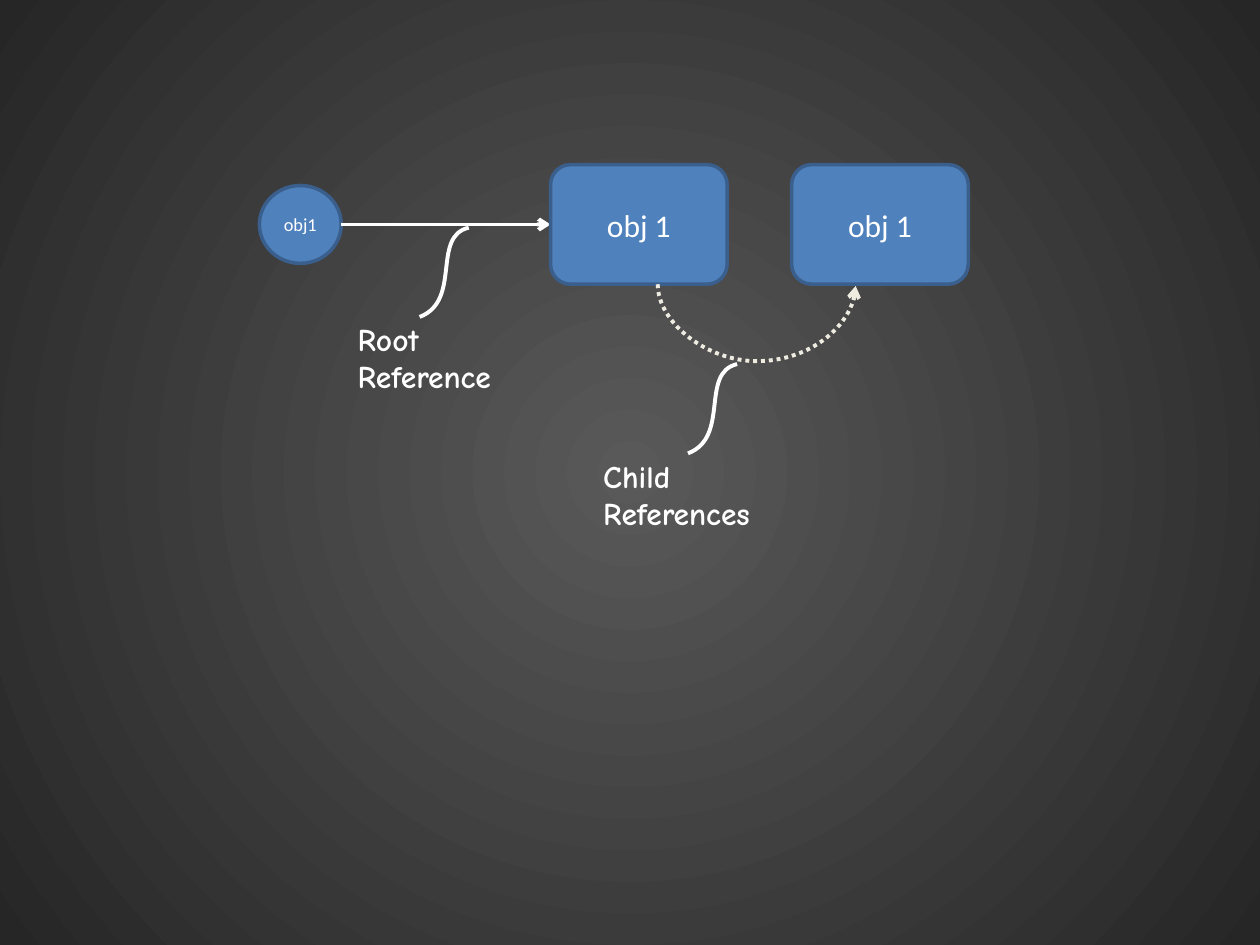
from dataclasses import dataclass

from lxml.etree import SubElement
from pptx import Presentation
from pptx.dml.color import RGBColor
from pptx.enum.dml import MSO_LINE
from pptx.enum.shapes import MSO_CONNECTOR, MSO_SHAPE
from pptx.enum.text import MSO_ANCHOR, MSO_AUTO_SIZE, PP_ALIGN
from pptx.oxml.ns import qn
from pptx.util import Cm, Pt


@dataclass(frozen=True)
class Theme:
    center: RGBColor = RGBColor(0x59, 0x59, 0x59)
    edge: RGBColor = RGBColor(0x26, 0x26, 0x26)
    node: RGBColor = RGBColor(0x4F, 0x81, 0xBD)
    outline: RGBColor = RGBColor(0x3A, 0x5F, 0x8C)
    white: RGBColor = RGBColor(0xFF, 0xFF, 0xFF)
    cream: RGBColor = RGBColor(0xEE, 0xEC, 0xE1)
    node_font: str = "Calibri"
    label_font: str = "Comic Neue"
    text_size: float = 18
    small_size: float = 10.5
    outline_width: float = 2
    line_width: float = 2.25


THEME = Theme()
BOX_WIDTH, BOX_HEIGHT = 3.56, 2.41


def paint_background(slide):
    """Radial gradient, light in the middle."""
    fill = slide.background.fill
    fill.gradient()
    for stop, color in zip(fill.gradient_stops, (THEME.center, THEME.edge)):
        stop.color.rgb = color
    gradient = slide.background._cSld.find(".//" + qn("a:gradFill"))
    gradient.remove(gradient.find(qn("a:lin")))
    radial = SubElement(gradient, qn("a:path"), path="circle")
    SubElement(radial, qn("a:fillToRect"), l="50000", t="50000", r="50000", b="50000")


def add_run(paragraph, text, font_name, size, bold=None):
    run = paragraph.add_run()
    run.text = text
    run.font.name = font_name
    run.font.size = Pt(size)
    run.font.bold = bold
    run.font.color.rgb = THEME.white


def add_node(slide, kind, left, top, width, height, text, size):
    shape = slide.shapes.add_shape(kind, Cm(left), Cm(top), Cm(width), Cm(height))
    shape.shadow.inherit = False
    shape.fill.solid()
    shape.fill.fore_color.rgb = THEME.node
    shape.line.color.rgb = THEME.outline
    shape.line.width = Pt(THEME.outline_width)
    frame = shape.text_frame
    frame.word_wrap = False
    frame.vertical_anchor = MSO_ANCHOR.MIDDLE
    paragraph = frame.paragraphs[0]
    paragraph.alignment = PP_ALIGN.CENTER
    add_run(paragraph, text, THEME.node_font, size)


def add_object_box(slide, left, top):
    add_node(slide, MSO_SHAPE.ROUNDED_RECTANGLE, left, top,
             BOX_WIDTH, BOX_HEIGHT, "obj 1", THEME.text_size)


def add_arrow(slide, kind, start, end, color, dash=None):
    arrow = slide.shapes.add_connector(kind, *map(Cm, start + end))
    arrow.line.color.rgb = color
    arrow.line.width = Pt(THEME.line_width)
    if dash:
        arrow.line.dash_style = dash
    properties = arrow._element.spPr
    SubElement(properties.find(qn("a:ln")), qn("a:tailEnd"), type="arrow")
    SubElement(properties, qn("a:effectLst"))
    return arrow


def add_callout(slide, left, top, text, text_left, text_top, text_width):
    """S-shaped leader, with its top left corner at left, top, and a label."""
    curve = [(0, 1.8), (0.86, 1.47), (0.23, 0.18), (0.99, 0)]
    points = [(Cm(left + x), Cm(top + y)) for x, y in curve]
    builder = slide.shapes.build_freeform(*points[0])
    builder.add_line_segments(points[1:], close=False)
    leader = builder.convert_to_shape()
    leader.shadow.inherit = False
    leader.fill.background()
    leader.line.color.rgb = THEME.white
    leader.line.width = Pt(THEME.line_width)

    # The three segment points become the handles and end of one Bezier curve
    outline = leader._element.spPr.find(".//" + qn("a:path"))
    segments = outline.findall(qn("a:lnTo"))
    bezier = SubElement(outline, qn("a:cubicBezTo"))
    for segment in segments:
        bezier.append(segment[0])
        outline.remove(segment)

    label = slide.shapes.add_textbox(Cm(text_left), Cm(text_top), Cm(text_width), Cm(1.02))
    frame = label.text_frame
    frame.word_wrap = True
    frame.auto_size = MSO_AUTO_SIZE.SHAPE_TO_FIT_TEXT
    add_run(frame.paragraphs[0], text, THEME.label_font, THEME.text_size, bold=True)


def add_root_reference(slide, left, top, width):
    """Root circle, with an arrow to the right edge of the region."""
    diameter, height = 1.65, 1.57
    middle = top + BOX_HEIGHT / 2
    add_node(slide, MSO_SHAPE.OVAL, left, middle - height / 2,
             diameter, height, "obj1", THEME.small_size)
    add_arrow(slide, MSO_CONNECTOR.STRAIGHT, (left + diameter, middle),
              (left + width, middle), THEME.white)
    add_callout(slide, left + 3.23, top + 1.27, "Root Reference",
                left + 1.73, top + 3, 4.45)


def add_child_reference(slide, left, top, width):
    """Two object boxes, joined by a dotted curve below them."""
    add_object_box(slide, left, top)
    add_object_box(slide, left + width - BOX_WIDTH, top)

    # The curve is a thin connector on its side, bulging far out of its frame
    start_x, end_x, bottom = left + 2.16, left + 6.15, top + BOX_HEIGHT
    span, depth, thickness = end_x - start_x, 1.55, 0.035
    center = (start_x + end_x) / 2
    middle = bottom + thickness / 2
    arrow = add_arrow(slide, MSO_CONNECTOR.CURVE,
                      (center - thickness / 2, middle - span / 2),
                      (center + thickness / 2, middle + span / 2),
                      THEME.cream, MSO_LINE.ROUND_DOT)
    properties = arrow._element.spPr
    frame = properties.find(qn("a:xfrm"))
    frame.set("rot", str(270 * 60000))
    frame.set("flipH", "1")
    bulge = round(depth / thickness * 100000)
    SubElement(properties.find(".//" + qn("a:avLst")), qn("a:gd"),
               name="adj1", fmla=f"val {bulge}")

    add_callout(slide, left + 2.77, top + 4.02, "Child References",
                left + 0.81, top + 5.76, 4.7)


def main():
    presentation = Presentation()
    presentation.slide_width = Cm(25.4)
    presentation.slide_height = Cm(19.05)
    slide = presentation.slides.add_slide(presentation.slide_layouts[6])
    paint_background(slide)
    add_root_reference(slide, left=5.23, top=3.32, width=5.87)
    add_child_reference(slide, left=11.1, top=3.32, width=8.42)
    presentation.save("out.pptx")


if __name__ == "__main__":
    main()
